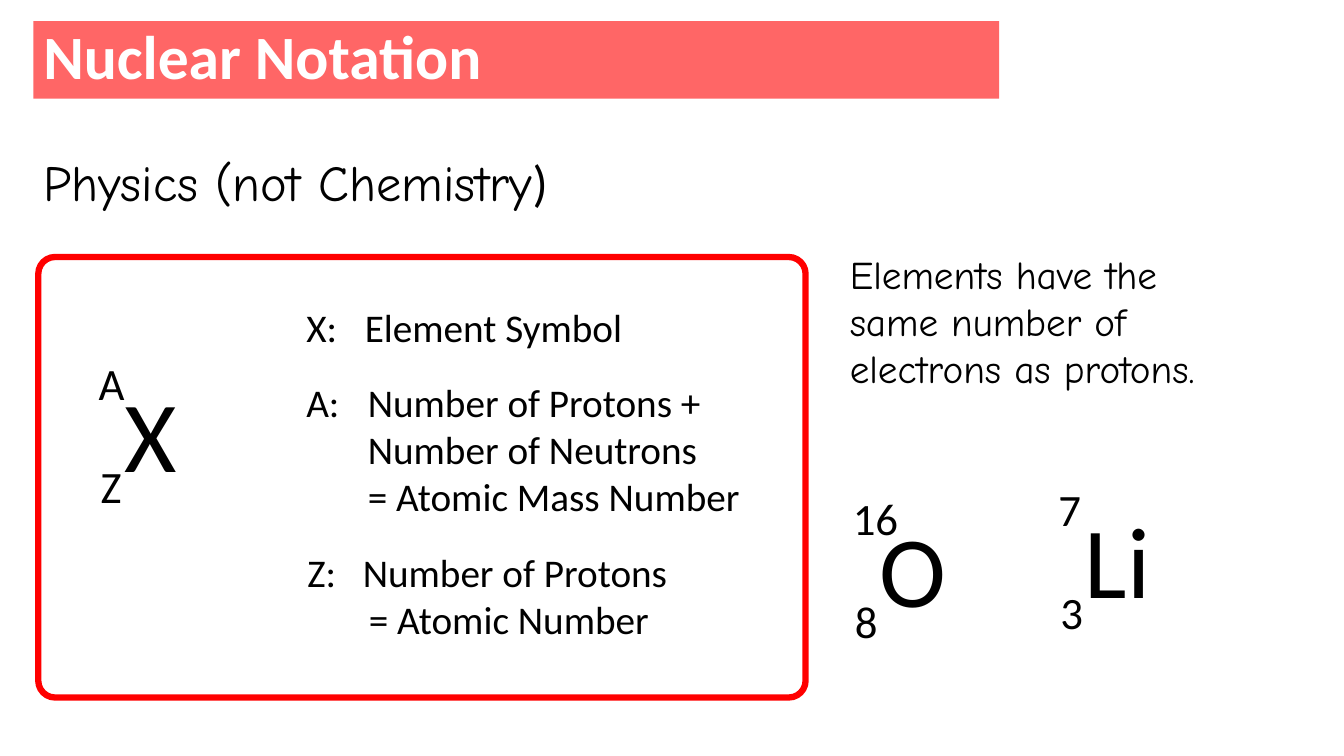
from dataclasses import dataclass

from pptx import Presentation
from pptx.dml.color import RGBColor
from pptx.enum.shapes import MSO_SHAPE as Shape
from pptx.enum.text import MSO_ANCHOR as Anchor, MSO_AUTO_SIZE as AutoSize, PP_ALIGN as Align
from pptx.util import Inches, Pt


@dataclass(frozen=True)
class Theme:
    black: str = "000000"
    white: str = "FFFFFF"
    banner: str = "FF6666"
    frame: str = "FF0000"
    plain: str = "Calibri"
    casual: str = "Comic Neue"
    title: int = 44
    symbol: int = 72
    heading: int = 36
    index: int = 32
    body: int = 28


THEME = Theme()


def write(para, text, size=THEME.body, font=THEME.plain, color=THEME.black, bold=False,
          margin=0, hanging=0):
    para.alignment = Align.LEFT
    if margin:
        properties = para._p.get_or_add_pPr()
        properties.set("marL", str(Inches(margin)))
        properties.set("indent", str(Inches(-hanging)))
    span = para.add_run()
    span.text = text
    span.font.size = Pt(size)
    span.font.name = font
    span.font.bold = bold
    span.font.color.rgb = RGBColor.from_string(color)


class SlideBuilder:
    def __init__(self, deck, theme):
        self.theme = theme
        self.slide = deck.slides.add_slide(deck.slide_layouts[5])

    def title(self, text, left, top, width, height):
        box = self.slide.shapes.title
        box.left, box.top = Inches(left), Inches(top)
        box.width, box.height = Inches(width), Inches(height)
        box.fill.solid()
        box.fill.fore_color.rgb = RGBColor.from_string(self.theme.banner)
        frame = box.text_frame
        frame.vertical_anchor = Anchor.MIDDLE
        frame.auto_size = AutoSize.NONE
        frame.paragraphs[0].line_spacing = 0.9
        write(frame.paragraphs[0], text, size=self.theme.title, color=self.theme.white, bold=True)

    def frame(self, left, top, width, height):
        box = self.slide.shapes.add_shape(
            Shape.ROUNDED_RECTANGLE, Inches(left), Inches(top), Inches(width), Inches(height))
        box.adjustments[0] = 0.038
        box.shadow.inherit = False
        box.fill.background()
        box.line.color.rgb = RGBColor.from_string(self.theme.frame)
        box.line.width = Pt(4.5)

    def group(self):
        return self.slide.shapes.add_group_shape().shapes

    def text(self, lines, left, top, width, height, wrap=True, shapes=None, **style):
        shapes = self.slide.shapes if shapes is None else shapes
        box = shapes.add_textbox(Inches(left), Inches(top), Inches(width), Inches(height))
        frame = box.text_frame
        frame.word_wrap = wrap
        frame.auto_size = AutoSize.SHAPE_TO_FIT_TEXT
        for number, line in enumerate(lines):
            para = frame.add_paragraph() if number else frame.paragraphs[0]
            text, extra = line if isinstance(line, tuple) else (line, {})
            write(para, text, **{**style, **extra})
        return box

    def nuclide(self, symbol, mass, charge, left, top, mass_width, charge_width):
        shapes = self.group()
        self.text([symbol], left + 0.26, top + 0.16, 0.91, 1.31, shapes=shapes,
                  size=self.theme.symbol)
        self.text([mass], left, top, mass_width, 0.64, wrap=False, shapes=shapes,
                  size=self.theme.index)
        self.text([charge], left + 0.02, top + 1.02, charge_width, 0.64, wrap=False,
                  shapes=shapes, size=self.theme.index)


def main():
    deck = Presentation()
    deck.slide_width, deck.slide_height = Inches(13.33), Inches(7.5)
    page = SlideBuilder(deck, THEME)

    page.title("Nuclear Notation", 0.33, 0.21, 9.58, 0.77)
    page.frame(0.38, 2.55, 7.61, 4.37)

    page.nuclide("X", "A", "Z", 0.88, 3.48, 0.46, 0.41)
    page.nuclide("O", "16", "8", 8.36, 4.82, 0.66, 0.43)
    page.nuclide("Li", "7", "3", 10.4, 4.73, 0.43, 0.43)

    page.text(["X:\tElement Symbol"], 2.94, 2.96, 3.77, 0.57, margin=0.58, hanging=0.58)
    page.text([("Z:\tNumber of Protons", {"margin": 0.55, "hanging": 0.55}),
               ("= Atomic Number", {"margin": 0.61})], 2.95, 5.39, 4.32, 1.04)
    mass_number = page.group()
    page.text(["A:"], 2.94, 3.7, 0.82, 0.57, shapes=mass_number)
    page.text(["Number of Protons + Number of Neutrons", "= Atomic Mass Number"],
              3.55, 3.7, 4.22, 1.51, shapes=mass_number)

    heading = page.text(["Physics (not Chemistry"], 0.33, 1.45, 5.71, 0.71, wrap=False,
                        size=THEME.heading, font=THEME.casual)
    write(heading.text_frame.paragraphs[0], ")", size=THEME.heading)
    page.text(["Elements have the same number of electrons as protons."],
              8.33, 2.43, 3.73, 1.99, font=THEME.casual)

    deck.save("out.pptx")


if __name__ == "__main__":
    main()
